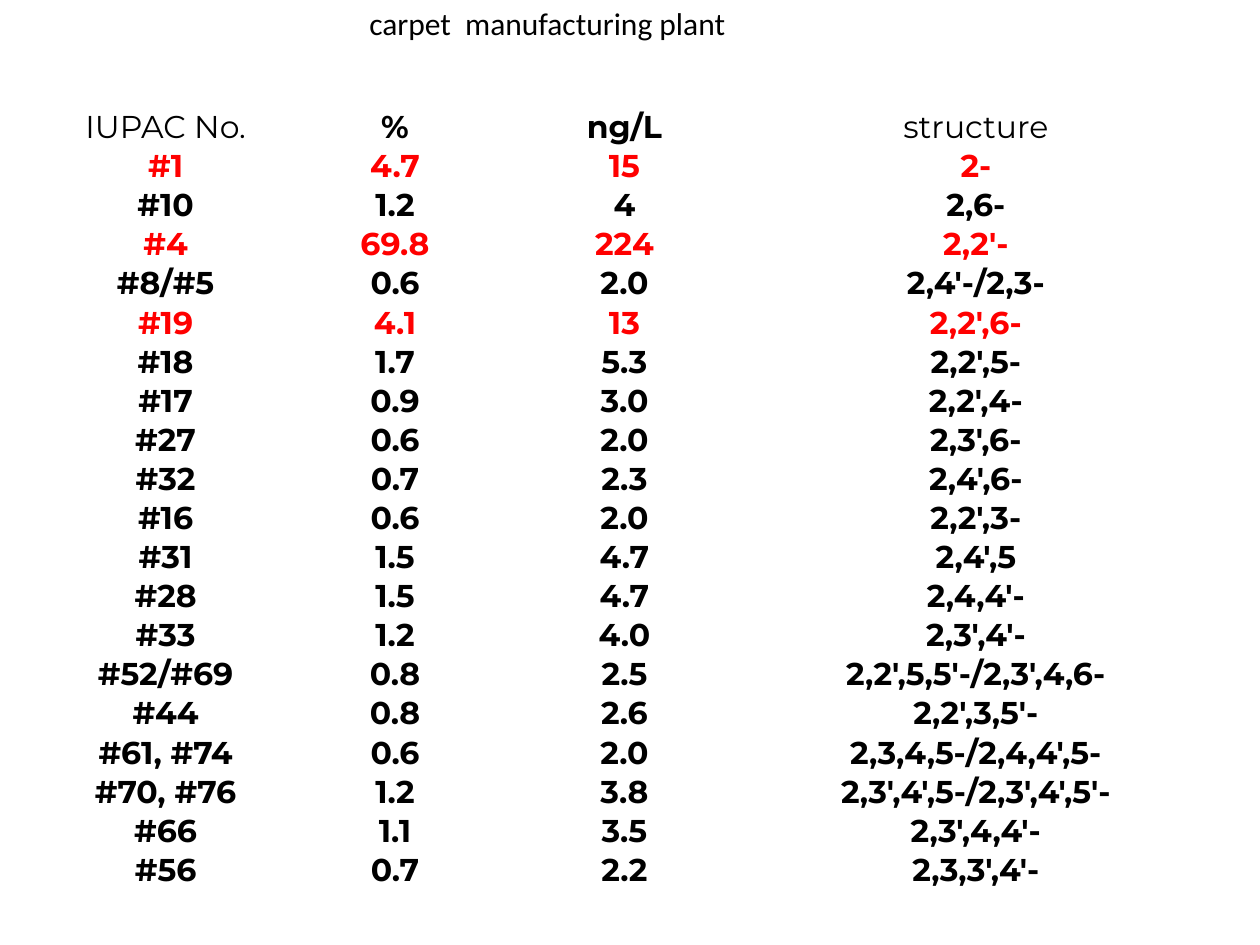
from pptx import Presentation
from pptx.dml.color import RGBColor
from pptx.enum import text
from pptx.util import Cm, Pt

BLACK = RGBColor(0, 0, 0)
RED = RGBColor(255, 0, 0)

HEADINGS = ("IUPAC No.", "%", "ng/L", "structure")
PLAIN_HEADINGS = ("IUPAC No.", "structure")
HIGHLIGHTED = ("#1", "#4", "#19")
CONGENERS = (
    ("#1", "4.7", "15", "2-"),
    ("#10", "1.2", "4", "2,6-"),
    ("#4", "69.8", "224", "2,2'-"),
    ("#8/#5", "0.6", "2.0", "2,4'-/2,3-"),
    ("#19", "4.1", "13", "2,2',6-"),
    ("#18", "1.7", "5.3", "2,2',5-"),
    ("#17", "0.9", "3.0", "2,2',4-"),
    ("#27", "0.6", "2.0", "2,3',6-"),
    ("#32", "0.7", "2.3", "2,4',6-"),
    ("#16", "0.6", "2.0", "2,2',3-"),
    ("#31", "1.5", "4.7", "2,4',5"),
    ("#28", "1.5", "4.7", "2,4,4'-"),
    ("#33", "1.2", "4.0", "2,3',4'-"),
    ("#52/#69", "0.8", "2.5", "2,2',5,5'-/2,3',4,6-"),
    ("#44", "0.8", "2.6", "2,2',3,5'-"),
    ("#61, #74", "0.6", "2.0", "2,3,4,5-/2,4,4',5-"),
    ("#70, #76", "1.2", "3.8", "2,3',4',5-/2,3',4',5'-"),
    ("#66", "1.1", "3.5", "2,3',4,4'-"),
    ("#56", "0.7", "2.2", "2,3,3',4'-"),
)
COLUMN_SHARES = (0.192, 0.203, 0.192, 0.413)


def write_centred(frame, words, font_name, color=BLACK, bold=False):
    frame.text = words
    para = frame.paragraphs[0]
    para.alignment = text.PP_ALIGN.CENTER
    font = para.runs[0].font
    font.name = font_name
    font.size = Pt(18)
    font.bold = bold
    font.color.rgb = color


def add_title(page, left, top, width, height):
    box = page.shapes.add_textbox(left, top, width, height)
    box.text_frame.word_wrap = True
    write_centred(box.text_frame, "carpet  manufacturing plant", "Calibri")


def fill_cell(cell, words, color, bold):
    cell.fill.background()
    cell.vertical_anchor = text.MSO_ANCHOR.MIDDLE
    cell.margin_left = cell.margin_right = cell.margin_top = Cm(0.02)
    cell.margin_bottom = 0
    write_centred(cell.text_frame, words, "Montserrat", color, bold)


def add_congener_table(page, left, top, width, height):
    records = (HEADINGS,) + CONGENERS
    table = page.shapes.add_table(
        len(records), len(HEADINGS), left, top, width, height).table
    table.first_row = table.horz_banding = False
    for column, share in zip(table.columns, COLUMN_SHARES):
        column.width = int(width * share)
    for row, record in zip(table.rows, records):
        color = RED if record[0] in HIGHLIGHTED else BLACK
        for cell, words in zip(row.cells, record):
            fill_cell(cell, words, color, words not in PLAIN_HEADINGS)


def main():
    deck = Presentation()
    deck.slide_width, deck.slide_height = Cm(25.4), Cm(19.05)
    page = deck.slides.add_slide(deck.slide_layouts[6])
    add_title(page, Cm(4.19), Cm(-0.05), Cm(13.69), Cm(1.45))
    add_congener_table(page, Cm(1.09), Cm(2.16), Cm(23.42), Cm(15.77))
    deck.save("out.pptx")


if __name__ == "__main__":
    main()
